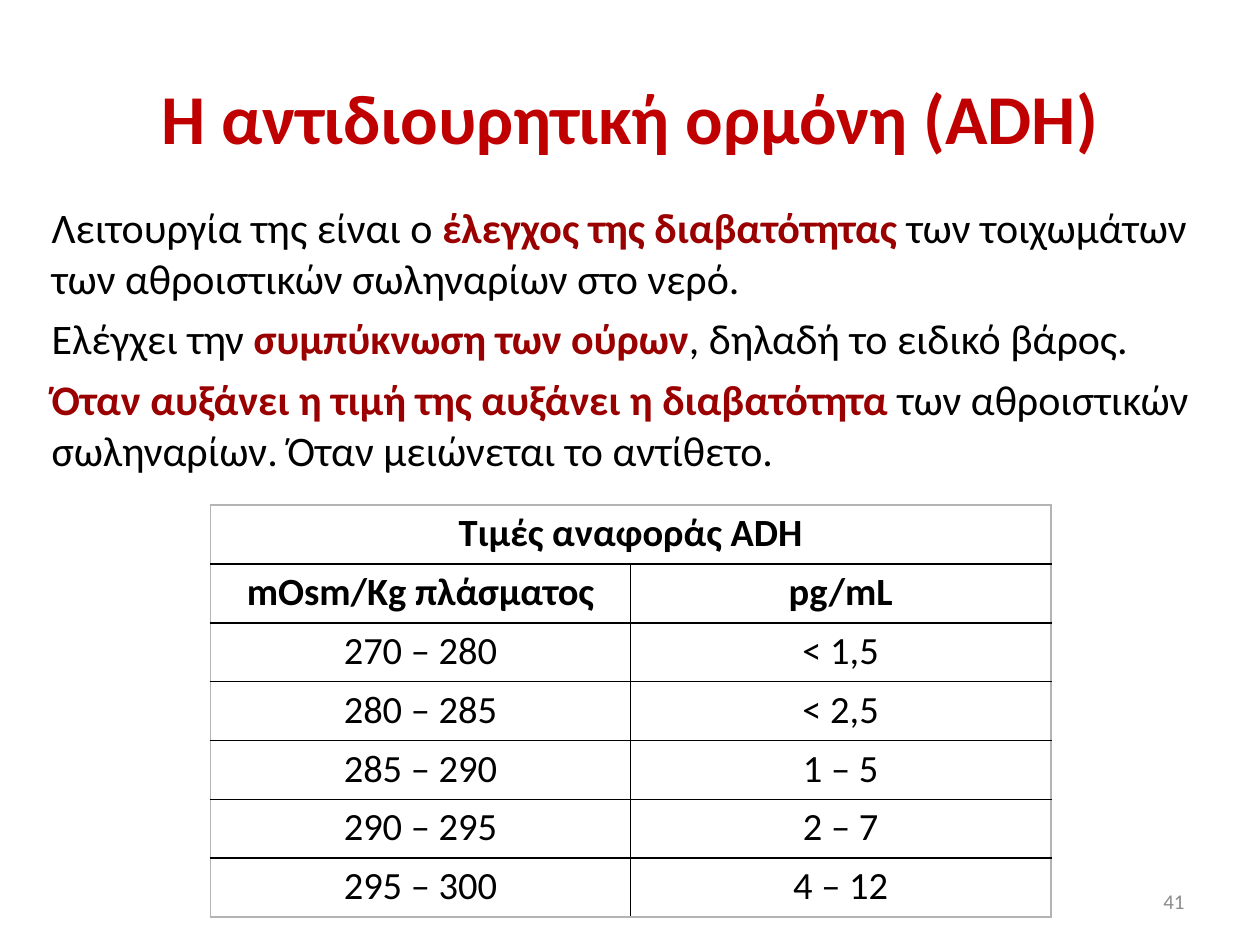
from lxml import etree
from pptx import Presentation
from pptx.dml.color import RGBColor
from pptx.enum import text
from pptx.oxml import ns
from pptx.util import Inches, Pt

RED = RGBColor(0xC0, 0x00, 0x00)
DARK = RGBColor(0x9B, 0x00, 0x00)
BLACK = RGBColor(0x00, 0x00, 0x00)
GRAY = RGBColor(0x8C, 0x8C, 0x8C)
SILVER = RGBColor(0xB4, 0xB4, 0xB4)
WHITE = RGBColor(0xFF, 0xFF, 0xFF)

POINTS = [
    [("Λειτουργία της είναι ο ", False), ("έλεγχος της διαβατότητας ", True),
     ("των τοιχωμάτων των αθροιστικών σωληναρίων στο νερό.", False)],
    [("Ελέγχει την ", False), ("συμπύκνωση των ούρων", True),
     (", δηλαδή το ειδικό βάρος.", False)],
    [("Όταν αυξάνει η τιμή της αυξάνει η διαβατότητα ", True),
     ("των αθροιστικών σωληναρίων. Όταν μειώνεται το αντίθετο.", False)],
]
ROWS = [
    ("Τιμές αναφοράς ADH", ""),
    ("mOsm/Kg πλάσματος", "pg/mL"),
    ("270 – 280", "< 1,5"),
    ("280 – 285", "< 2,5"),
    ("285 – 290", "1 – 5"),
    ("290 – 295", "2 – 7"),
    ("295 – 300", "4 – 12"),
]


class Deck:
    face = "Calibri"

    def __init__(self):
        self.prs = Presentation()
        self.prs.slide_width = Inches(10)
        self.prs.slide_height = Inches(7.5)
        self.slide = self.prs.slides.add_slide(self.prs.slide_layouts[1])

    def place(self, shape, left, top, width, height):
        shape.left, shape.top = Inches(left), Inches(top)
        shape.width, shape.height = Inches(width), Inches(height)

    def style(self, para, size, color, bold=False, align=None):
        para.font.name = self.face
        para.font.size = Pt(size)
        para.font.bold = bold
        para.font.color.rgb = color
        para.alignment = align

    def title(self, words, *box):
        shape = self.slide.shapes.title
        self.place(shape, *box)
        frame = shape.text_frame
        frame.text = words
        frame.vertical_anchor = text.MSO_ANCHOR.MIDDLE
        self.style(frame.paragraphs[0], 40, RED, True, text.PP_ALIGN.CENTER)

    def body(self, points, *box):
        shape = self.slide.placeholders[1]
        self.place(shape, *box)
        frame = shape.text_frame
        frame.auto_size = text.MSO_AUTO_SIZE.SHAPE_TO_FIT_TEXT
        for i, point in enumerate(points):
            para = frame.add_paragraph() if i else frame.paragraphs[0]
            self.style(para, 24, BLACK)
            para.space_before = Pt(6)
            props = para._p.get_or_add_pPr()
            props.set("marL", "0")
            props.set("indent", "0")
            props.insert_element_before(
                etree.Element(ns.qn("a:buNone")), "a:tabLst", "a:defRPr")
            for words, strong in point:
                run = para.add_run()
                run.text = words
                run.font.name = self.face
                run.font.bold = strong
                run.font.color.rgb = DARK if strong else BLACK

    def border(self, cell, colors):
        props = cell._tc.get_or_add_tcPr()
        for i, (side, color) in enumerate(zip("LRTB", colors)):
            line = etree.Element(ns.qn(f"a:ln{side}"), w=str(Pt(1)))
            fill = etree.SubElement(line, ns.qn("a:solidFill"))
            etree.SubElement(fill, ns.qn("a:srgbClr"), val=str(color))
            props.insert(i, line)

    def table(self, rows, left, top, width, height):
        count, cols = len(rows), len(rows[0])
        grid = self.slide.shapes.add_table(
            count, cols, Inches(left), Inches(top),
            Inches(width), Inches(height)).table
        grid.first_row = grid.horz_banding = False
        grid.cell(0, 0).merge(grid.cell(0, cols - 1))
        for r, row in enumerate(rows):
            for c, words in enumerate(row):
                cell = grid.cell(r, c)
                cell.fill.solid()
                cell.fill.fore_color.rgb = WHITE
                cell.margin_top = cell.margin_bottom = Inches(0.04)
                edges = (c == 0, c == cols - 1 or r == 0,
                         r == 0, r == count - 1)
                self.border(cell, [SILVER if e else BLACK for e in edges])
                if words:
                    cell.text = words
                    self.style(cell.text_frame.paragraphs[0], 22, BLACK,
                               r < 2, text.PP_ALIGN.CENTER)

    def number(self, words, *box):
        shape = self.slide.shapes.add_textbox(*map(Inches, box))
        frame = shape.text_frame
        frame.word_wrap = True
        frame.vertical_anchor = text.MSO_ANCHOR.MIDDLE
        frame.text = words
        self.style(frame.paragraphs[0], 12, GRAY, align=text.PP_ALIGN.RIGHT)


def main():
    deck = Deck()
    deck.title("Η αντιδιουρητική ορμόνη (ADH)", 0.5, 0.3, 9, 1.25)
    deck.body(POINTS, 0.31, 1.55, 9.37, 2.29)
    deck.table(ROWS, 1.67, 4.01, 6.67, 3.27)
    deck.number("41", 7.17, 6.95, 2.33, 0.4)
    deck.prs.save("out.pptx")


if __name__ == "__main__":
    main()
